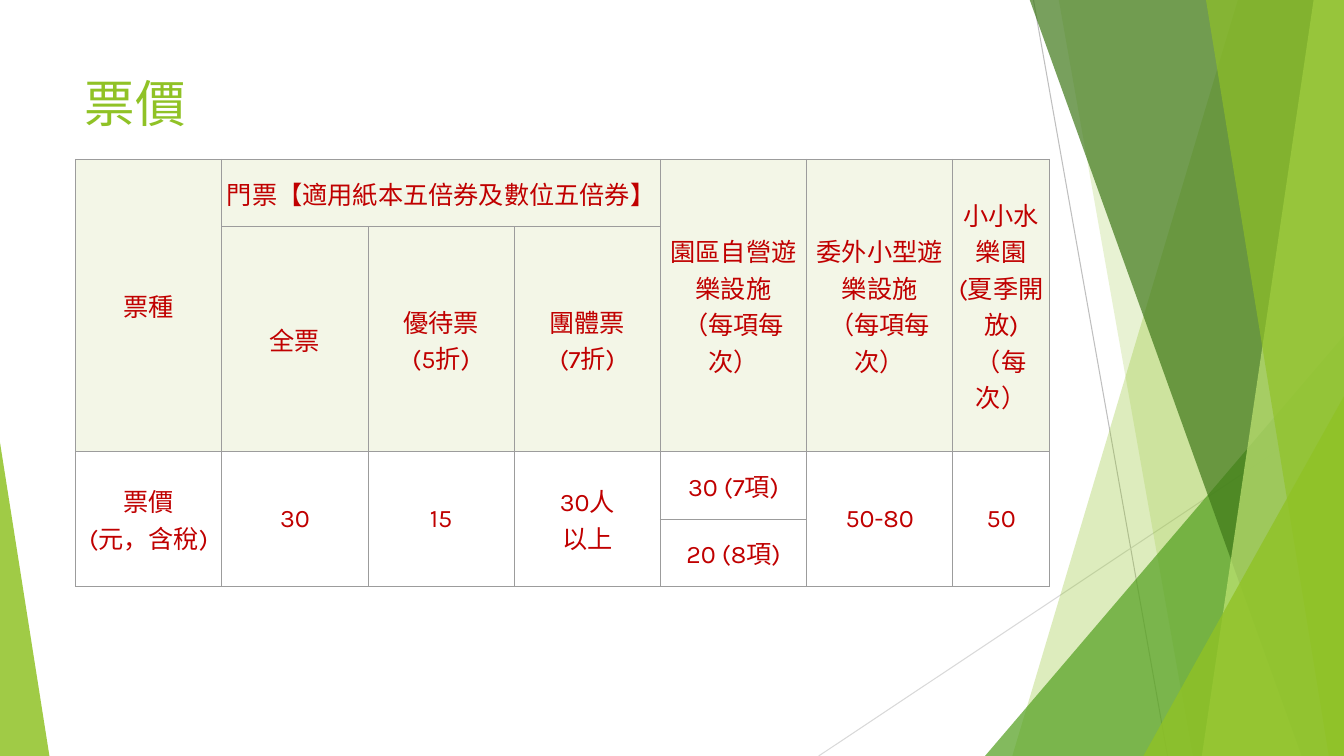
from dataclasses import dataclass

from lxml.etree import SubElement
from pptx import Presentation
from pptx.dml.color import RGBColor
from pptx.enum.shapes import MSO_CONNECTOR, MSO_SHAPE
from pptx.enum.text import MSO_ANCHOR, PP_ALIGN
from pptx.oxml.ns import qn
from pptx.util import Inches, Pt


@dataclass(frozen=True)
class Theme:
    font: str = "Karla"
    title_size: int = 36
    cell_size: int = 18
    green: str = "90C226"
    mid_green: str = "54A021"
    dark_green: str = "3F7819"
    pale_green: str = "C0E474"
    price_red: str = "C00000"
    header_fill: str = "F3F6E7"
    body_fill: str = "FFFFFF"
    border: str = "9C9C9C"
    grey: str = "BFBFBF"
    light_grey: str = "D9D9D9"
    hairline: float = 0.75


THEME = Theme()
WIDTH, HEIGHT, BLEED = 13.33, 7.5, -0.01

TITLE = "票價"
TITLE_BOX = (0.74, 0.67, 9.4, 1.44)

TABLE_CORNER = (0.75, 1.58)
COLUMN_WIDTHS = [1.45] * 6 + [0.96]
ROW_HEIGHTS = [0.67, 2.21, 0.67, 0.67]
HEADER_ROWS = 2
CELL_INSET = 0.03
PRICES = [
    ["票種", "門票【適用紙本五倍券及數位五倍券】", "", "", "園區自營遊樂設施\n（每項每次）",
     "委外小型遊樂設施\n（每項每次）", "小小水樂園\n(夏季開放)\n（每次）"],
    ["", "全票", "優待票\n(5折)", "團體票\n(7折)", "", "", ""],
    ["票價\n(元，含稅)", "30", "15", "30人\n以上", "30 (7項)", "50-80", "50"],
    ["", "", "", "", "20 (8項)", "", ""],
]
MERGES = [((0, 1), (0, 3))]
MERGES += [((0, column), (1, column)) for column in (0, 4, 5, 6)]
MERGES += [((2, column), (3, column)) for column in (0, 1, 2, 3, 5, 6)]

RAYS = [
    ((10.25, 0), (11.58, HEIGHT), THEME.grey),
    ((WIDTH, 4.03), (8.12, HEIGHT), THEME.light_grey),
]
BACK_BANDS = [(12.28, 10.04, THEME.green, 30), (10.5, 11.83, THEME.green, 20)]
BACK_CORNER = [(9.77, 3.33, 3.56, 1, THEME.mid_green, 72)]
FRONT_BANDS = [
    (10.21, 12.91, THEME.dark_green, 70),
    (13.03, 11.92, THEME.pale_green, 70),
    (11.96, 13.18, THEME.green, 65),
]
FRONT_CORNERS = [
    (11.34, 3.93, 1.99, 1, THEME.green, 80),
    (0, 4.39, 0.49, 0, THEME.green, 85),
]


def rgb(color):
    return RGBColor.from_string(color)


def style_font(paragraph, size, color):
    for run in paragraph.runs:
        run.font.name = THEME.font
        run.font.size = Pt(size)
        run.font.color.rgb = rgb(color)


def paint(shape, color, opacity):
    shape.shadow.inherit = False
    shape.line.fill.background()
    shape.fill.solid()
    shape.fill.fore_color.rgb = rgb(color)
    tint = shape._element.spPr.find(qn("a:solidFill"))[0]
    SubElement(tint, qn("a:alpha"), val=str(opacity * 1000))


def add_rays(shapes):
    for start, end, color in RAYS:
        ray = shapes.add_connector(
            MSO_CONNECTOR.STRAIGHT, *map(Inches, start + end))
        ray.line.color.rgb = rgb(color)
        ray.line.width = Pt(THEME.hairline)
        SubElement(ray._element.spPr, qn("a:effectLst"))


def add_bands(shapes, bands):
    for top_x, bottom_x, color, opacity in bands:
        outline = [(WIDTH, BLEED), (WIDTH, HEIGHT), (bottom_x, HEIGHT)]
        builder = shapes.build_freeform(Inches(top_x), Inches(BLEED))
        builder.add_line_segments([(Inches(x), Inches(y)) for x, y in outline])
        paint(builder.convert_to_shape(), color, opacity)


def add_corners(shapes, corners):
    for left, top, width, apex, color, opacity in corners:
        box = (left, top, width, HEIGHT - top)
        corner = shapes.add_shape(
            MSO_SHAPE.ISOSCELES_TRIANGLE, *map(Inches, box))
        corner.adjustments[0] = apex
        paint(corner, color, opacity)


def add_borders(cell):
    properties = cell._tc.get_or_add_tcPr()
    for position, side in enumerate(("lnL", "lnR", "lnT", "lnB")):
        edge = SubElement(properties, qn(f"a:{side}"), w=str(Pt(THEME.hairline)))
        properties.insert(position, edge)
        SubElement(SubElement(edge, qn("a:solidFill")), qn("a:srgbClr"), val=THEME.border)


def format_cell(cell, text, fill):
    cell.fill.solid()
    cell.fill.fore_color.rgb = rgb(fill)
    cell.vertical_anchor = MSO_ANCHOR.MIDDLE
    cell.margin_left = cell.margin_right = Inches(CELL_INSET)
    cell.margin_top = cell.margin_bottom = Inches(CELL_INSET)
    add_borders(cell)
    label = cell.text_frame.paragraphs[0]
    label.text = text
    label.alignment = PP_ALIGN.CENTER
    style_font(label, THEME.cell_size, THEME.price_red)


def add_prices(shapes):
    size = (sum(COLUMN_WIDTHS), sum(ROW_HEIGHTS))
    prices = shapes.add_table(
        len(ROW_HEIGHTS), len(COLUMN_WIDTHS), *map(Inches, TABLE_CORNER + size)).table
    prices.first_row = prices.horz_banding = False
    for column, width in zip(prices.columns, COLUMN_WIDTHS):
        column.width = Inches(width)
    for row, height in zip(prices.rows, ROW_HEIGHTS):
        row.height = Inches(height)
    for row, labels in enumerate(PRICES):
        fill = THEME.header_fill if row < HEADER_ROWS else THEME.body_fill
        for column, text in enumerate(labels):
            format_cell(prices.cell(row, column), text, fill)
    for first, last in MERGES:
        prices.cell(*first).merge(prices.cell(*last))


def format_title(title):
    title.left, title.top, title.width, title.height = map(Inches, TITLE_BOX)
    title.text_frame.text = TITLE
    title.text_frame.vertical_anchor = MSO_ANCHOR.TOP
    heading = title.text_frame.paragraphs[0]
    heading.alignment = PP_ALIGN.LEFT
    style_font(heading, THEME.title_size, THEME.green)


def main():
    deck = Presentation()
    deck.slide_width, deck.slide_height = Inches(WIDTH), Inches(HEIGHT)
    slide = deck.slides.add_slide(deck.slide_layouts[5])
    shapes = slide.shapes
    format_title(shapes.title)
    add_rays(shapes)
    add_bands(shapes, BACK_BANDS)
    add_corners(shapes, BACK_CORNER)
    add_bands(shapes, FRONT_BANDS)
    add_corners(shapes, FRONT_CORNERS)
    add_prices(shapes)
    deck.save("out.pptx")


if __name__ == "__main__":
    main()
